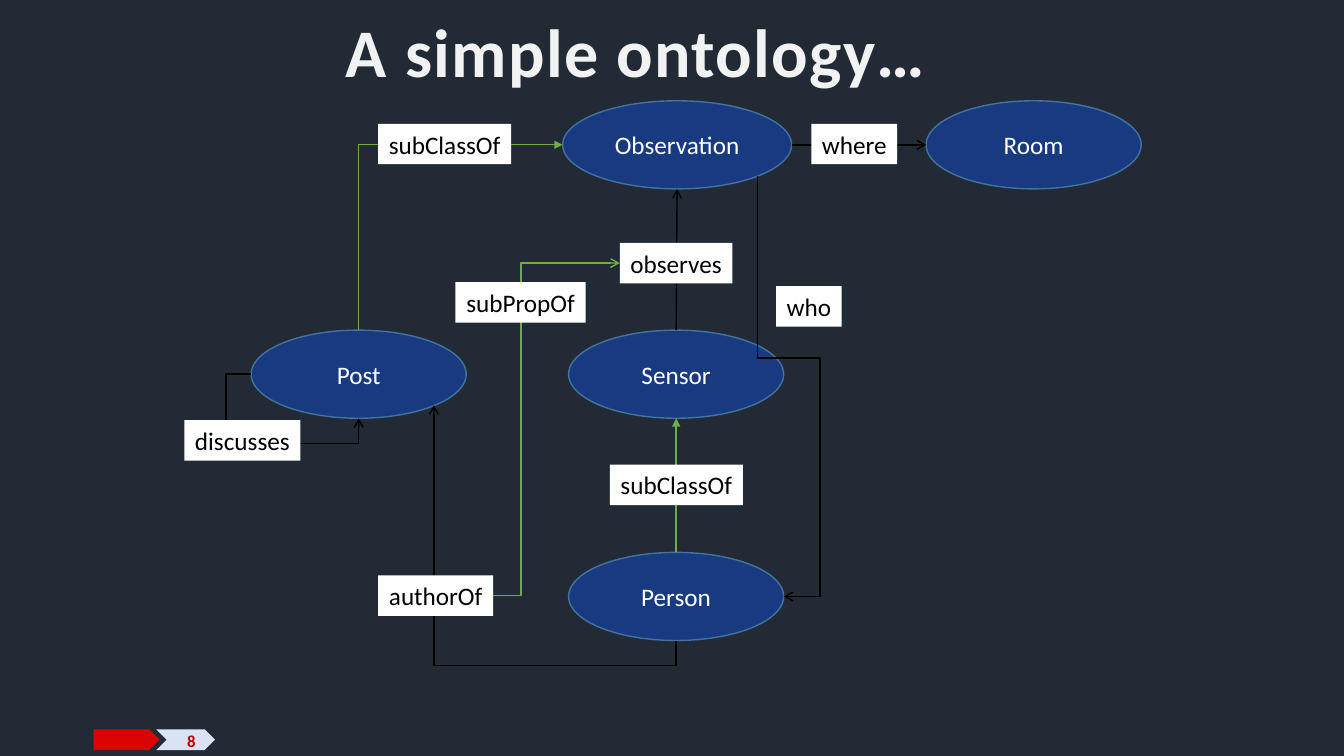
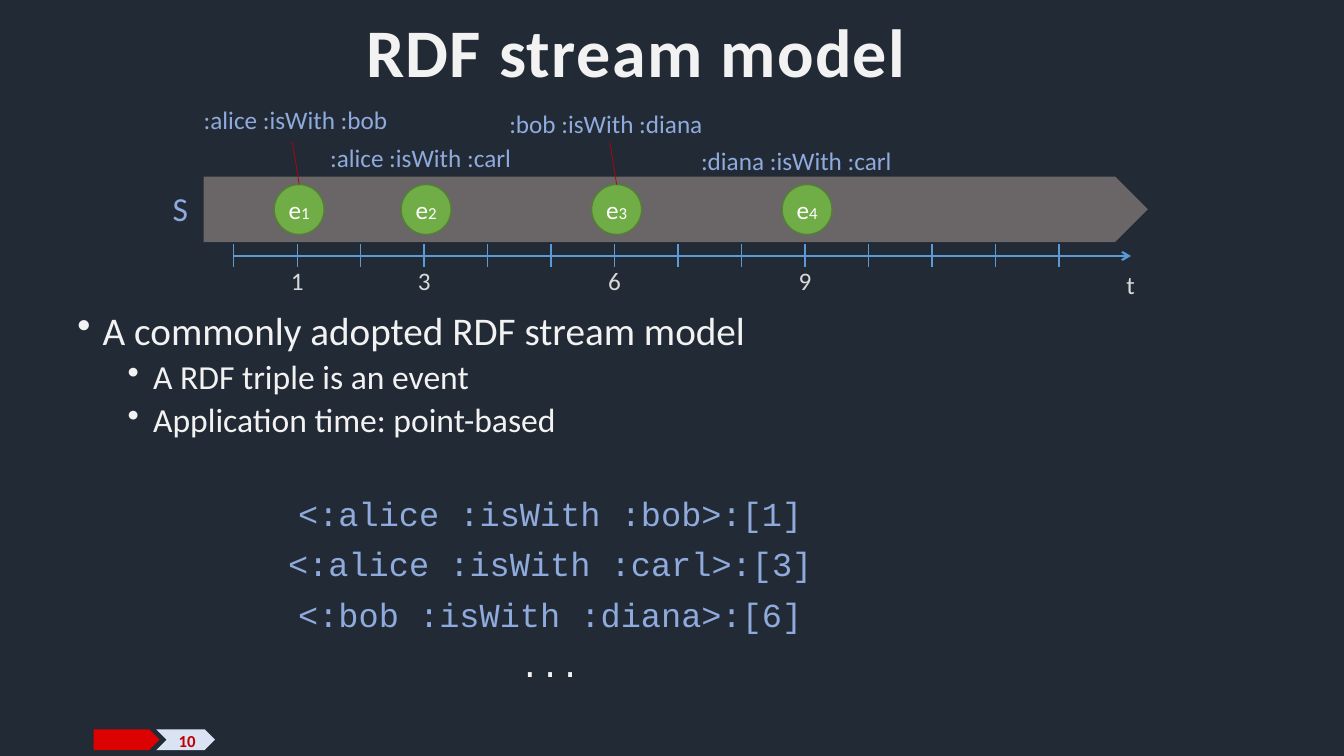
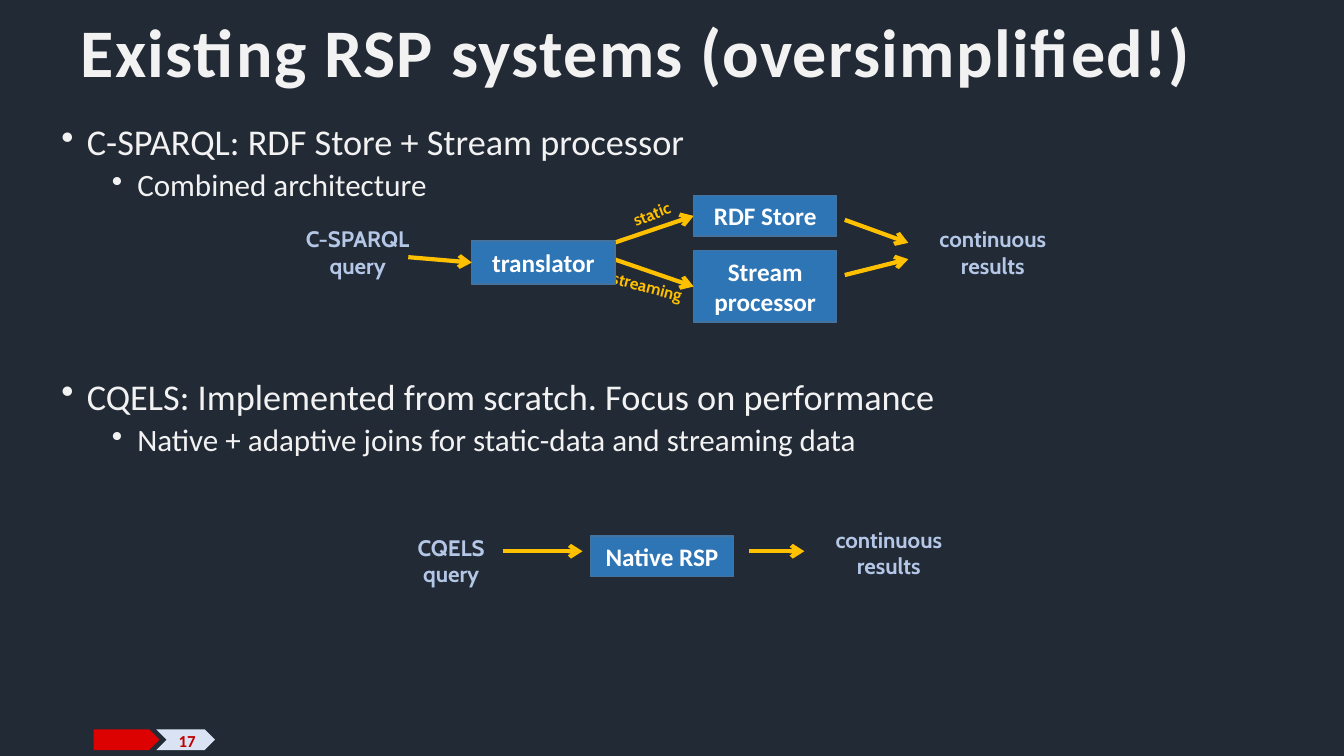
import pptx
import pptx.util
import pptx.dml.color
import pptx.enum.dml
import pptx.enum.shapes
import pptx.enum.text
import pptx.oxml.ns
from lxml import etree

Cm, Pt = pptx.util.Cm, pptx.util.Pt
RGBColor = pptx.dml.color.RGBColor
Kind = pptx.enum.shapes.MSO_SHAPE
Link = pptx.enum.shapes.MSO_CONNECTOR
Align = pptx.enum.text.PP_ALIGN
Anchor = pptx.enum.text.MSO_ANCHOR
qn = pptx.oxml.ns.qn

NIGHT = RGBColor(0x22, 0x2A, 0x35)
RED = RGBColor(0xDD, 0x02, 0x02)
WINE = RGBColor(0xC0, 0x00, 0x00)
ICE = RGBColor(0xDA, 0xE3, 0xF3)
PALE = RGBColor(0xF2, 0xF2, 0xF2)
WHITE = RGBColor(0xFF, 0xFF, 0xFF)
BLACK = RGBColor(0x00, 0x00, 0x00)
NAVY = RGBColor(0x18, 0x3A, 0x81)
STEEL = RGBColor(0x43, 0x73, 0x9E)
BLUE = RGBColor(0x2E, 0x75, 0xB6)
SKY = RGBColor(0x5B, 0x9B, 0xD5)
LILAC = RGBColor(0x8F, 0xAA, 0xDC)
MIST = RGBColor(0xB4, 0xC7, 0xE7)
GREEN = RGBColor(0x70, 0xAD, 0x47)
MOSS = RGBColor(0x53, 0x80, 0x35)
GREY = RGBColor(0x76, 0x71, 0x71)
SILVER = RGBColor(0xD9, 0xD9, 0xD9)
GOLD = RGBColor(0xFF, 0xC0, 0x00)


def put(shapes, kind, x, y, w, h, text="", size=18, color=WHITE, fill=None,
        edge=None, bold=False, font="Calibri", align=Align.CENTER):
    """Add a preset shape, or a text box when kind is None."""
    area = Cm(x), Cm(y), Cm(w), Cm(h)
    if kind is None:
        shape = shapes.add_textbox(*area)
    else:
        shape = shapes.add_shape(kind, *area)
        shape.shadow.inherit = False
        shape.fill.solid()
        shape.fill.fore_color.rgb = fill
        if edge is None:
            shape.line.fill.background()
        else:
            shape.line.color.rgb = edge
            shape.line.width = Pt(1)
    frame = shape.text_frame
    frame.word_wrap = True
    frame.margin_left = frame.margin_right = 0
    frame.vertical_anchor = Anchor.MIDDLE
    frame.text = text
    for par in frame.paragraphs:
        par.alignment = align
        for run in par.runs:
            run.font.name = font
            run.font.size = Pt(size)
            run.font.bold = bold
            run.font.color.rgb = color
    return shape


def join(shapes, x1, y1, x2, y2, color, width=1, head=None):
    """Add a straight connector with an optional arrowhead."""
    line = shapes.add_connector(Link.STRAIGHT, Cm(x1), Cm(y1), Cm(x2), Cm(y2))
    line.line.color.rgb = color
    line.line.width = Pt(width)
    props = line.element.spPr
    if head:
        etree.SubElement(props.find(qn("a:ln")), qn("a:tailEnd"), type=head)
    etree.SubElement(props, qn("a:effectLst"))
    return line


deck = pptx.Presentation()
deck.slide_width, deck.slide_height = Cm(33.87), Cm(19.05)

# Shared background, title place and footer bands
back = deck.slide_master.background.fill
back.solid()
back.fore_color.rgb = NIGHT
layout = deck.slide_layouts[5]
head = layout.placeholders[0]
head.left, head.top, head.width, head.height = Cm(0.79), Cm(0.53), Cm(30.48), Cm(1.73)

pages = []
for number, text in ((8, "A simple ontology…"), (10, "RDF stream model"),
                     (17, "Existing RSP systems (oversimplified!)")):
    page = deck.slides.add_slide(layout)
    frame = page.shapes.title.text_frame
    frame.text = text
    frame.word_wrap = True
    frame.auto_size = pptx.enum.text.MSO_AUTO_SIZE.NONE
    frame.vertical_anchor = Anchor.MIDDLE
    par = frame.paragraphs[0]
    par.alignment = Align.CENTER
    par.line_spacing = 0.9
    par.space_after = Pt(12)
    run = par.runs[0]
    run.font.name = "Calibri"
    run.font.size = Pt(48.6)
    run.font.bold = True
    run.font.color.rgb = PALE
    run.font.fill.solid()
    run.font.color.rgb = PALE
    par.runs[0]._r.get_or_add_rPr().set("spc", "100")
    put(page.shapes, None, 3.99, 18.16, 0.94, 1.02, str(number), 12, WINE,
        bold=True, align=Align.RIGHT)
    pages.append(page.shapes)
onto, stream, system = pages

for kind, x, w, fill in ((Kind.PENTAGON, 2.36, 1.66, RED),
                         (Kind.CHEVRON, 3.94, 1.48, ICE)):
    band = put(onto, kind, x, 18.38, w, 0.52, fill=fill)
    layout.shapes.element.append(band.element)

# Body text: text, bullet level (None for code), size, space before, colour
bodies = (
    (stream, (1.7, 7.72, 24.33, 10.11), (
        ("A commonly adopted RDF stream model", 0, 28, 0, PALE),
        ("A RDF triple is an event", 1, 24, 5, PALE),
        ("Application time: point-based", 1, 24, 5, PALE),
        ("<:alice :isWith :bob>:[1]", None, 24, 41, LILAC),
        ("<:alice :isWith :carl>:[3]", None, 24, 10, LILAC),
        ("<:bob :isWith :diana>:[6]", None, 24, 10, LILAC),
        ("...", None, 24, 10, PALE))),
    (system, (1.3, 3, 22.76, 8.89), (
        ("C-SPARQL: RDF Store + Stream processor", 0, 25.9, 0, PALE),
        ("Combined architecture", 1, 22.2, 5, PALE),
        ("CQELS: Implemented from scratch. Focus on performance", 0, 25.9, 125, PALE),
        ("Native + adaptive joins for static-data and streaming data", 1, 22.2, 5, PALE))),
)
for shapes, area, rows in bodies:
    frame = shapes.add_textbox(*map(Cm, area)).text_frame
    frame.word_wrap = True
    frame.text = "\n".join(row[0] for row in rows)
    for par, (text, level, size, before, color) in zip(frame.paragraphs, rows):
        par.line_spacing = 0.9
        par.space_before = Pt(before)
        if level is None:
            par.alignment = Align.CENTER
        else:
            par.level = level
            props = par._p.get_or_add_pPr()
            props.set("marL", str(Cm(0.64 + 1.27 * level)))
            props.set("indent", str(Cm(-0.64)))
            etree.SubElement(props, qn("a:buChar"), char="•")
        font = par.runs[0].font
        font.name = "Courier New" if level is None else "Calibri"
        font.size = Pt(size)
        font.color.rgb = color

# Ontology: classes
nodes = {}
for name, x, y, w in (("Observation", 14.18, 2.54, 5.77), ("Sensor", 14.33, 8.32, 5.42),
                      ("Person", 14.33, 13.92, 5.42), ("Post", 6.33, 8.32, 5.42),
                      ("Room", 23.34, 2.54, 5.42)):
    nodes[name] = put(onto, Kind.OVAL, x, y, w, 2.22, name, fill=NAVY, edge=STEEL)

# Ontology: property labels
tags = []
for name, x, y, w in (("where", 20.45, 3.12, 2.16), ("discusses", 4.65, 10.59, 2.92),
                      ("who", 19.56, 7.21, 1.65), ("observes", 15.62, 6.12, 2.84),
                      ("subClassOf", 15.37, 11.71, 3.35), ("subClassOf", 9.53, 3.12, 3.35),
                      ("authorOf", 9.53, 14.5, 2.9), ("subPropOf", 11.48, 7.11, 3.28)):
    tag = put(onto, Kind.RECTANGLE, x, y, w, 1.02, name, color=BLACK, fill=WHITE)
    nodes[name] = tag
    tags.append(tag)

# Ontology: links between sites, counted anticlockwise from the top in eighths
sites = ((0.5, 0), (0.15, 0.15), (0, 0.5), (0.15, 0.85),
         (0.5, 1), (0.85, 0.85), (1, 0.5), (0.85, 0.15))
links = (
    ("Person", 4, "Post", 5, BLACK, "arrow", "bentConnector3", 90, "H", (-10700,)),
    ("Observation", 6, "Room", 2, BLACK, "arrow", None, 0, "", ()),
    ("Post", 0, "Observation", 2, GREEN, "triangle", "bentConnector2", 90, "HV", ()),
    ("Person", 0, "Sensor", 4, GREEN, "triangle", None, 0, "", ()),
    ("Post", 2, "Post", 4, BLACK, "arrow", "bentConnector4", 180, "HV", (-23500, 157700)),
    ("Observation", 5, "Person", 6, BLACK, "arrow", "bentConnector4", 270, "H", (43300, 237900)),
    ("Sensor", 0, "Observation", 4, BLACK, "arrow", None, 0, "", ()),
    ("authorOf", 6, "observes", 2, GREEN, "arrow", "bentConnector3", 0, "V", (22000,)),
)
for start, i, end, j, color, tip, bend, turn, flips, bends in links:
    ends = []
    for name, site in ((start, i), (end, j)):
        node = nodes[name]
        ends += [(node.left + node.width * sites[site][0]) / Cm(1),
                 (node.top + node.height * sites[site][1]) / Cm(1)]
    line = join(onto, *ends, color, 1, tip)
    for mark, name, site in (("a:stCxn", start, i), ("a:endCxn", end, j)):
        node = nodes[name]
        spot = site // 2 if node in tags else site
        etree.SubElement(line.element.nvCxnSpPr.cNvCxnSpPr, qn(mark),
                         id=str(node.shape_id), idx=str(spot))
    if bend:
        x1, y1, x2, y2 = ends
        w, h = abs(x2 - x1), abs(y2 - y1)
        if turn % 180:
            w, h = h, w
        line.left, line.top = Cm((x1 + x2 - w) / 2), Cm((y1 + y2 - h) / 2)
        line.width, line.height = Cm(w), Cm(h)
        form = line.element.spPr.find(qn("a:xfrm"))
        form.set("rot", str(turn * 60000))
        for axis in "HV":
            form.set("flip" + axis, "1" if axis in flips else "0")
        shape = line.element.spPr.find(qn("a:prstGeom"))
        shape.set("prst", bend)
        for n, value in enumerate(bends, 1):
            etree.SubElement(shape.find(qn("a:avLst")), qn("a:gd"),
                             name=f"adj{n}", fmla=f"val {value}")
for tag in tags:
    onto.element.append(tag.element)

# Stream: band and time axis
band = put(stream, Kind.PENTAGON, 5.13, 4.45, 23.8, 1.65, fill=GREY)
tint = band.element.spPr.find(qn("a:solidFill"))[0]
etree.SubElement(tint, qn("a:alpha"), val="86000")
left, step = 5.89, 1.6
join(stream, left, 6.45, 28.5, 6.45, SKY, 1.5, "arrow")
for n in range(14):
    join(stream, left + n * step, 6.15, left + n * step, 6.73, SKY)
put(stream, None, 4.09, 4.62, 0.91, 1.27, "S", 24, LILAC)
put(stream, None, 28.12, 6.65, 0.74, 1.02, "t", color=SILVER)

# Stream: events with their triples
events = ((1, ":alice :isWith :bob", 4.8, 2.51, True),
          (3, ":alice :isWith :carl", 7.95, 3.45, False),
          (6, ":bob :isWith :diana", 12.62, 2.59, True),
          (9, ":diana :isWith :carl", 17.42, 3.53, False))
for n, (time, text, x, y, far) in enumerate(events, 1):
    mid = left + time * step
    ball = put(stream, Kind.OVAL, mid - 0.58, 4.65, 1.26, 1.26, "e", fill=GREEN, edge=MOSS)
    run = ball.text_frame.paragraphs[0].add_run()
    run.text = str(n)
    run.font.name = "Calibri"
    run.font.size = Pt(12)
    run.font.color.rgb = WHITE
    put(stream, None, mid - 0.42, 6.55, 0.84, 1.02, str(time), color=SILVER)
    if far:
        join(stream, mid + 0.05, 4.65, mid - 0.12, 3.58, WINE, 0.5)
    put(stream, None, x, y, 5.3, 1.02, text, color=LILAC)

# Systems: captions
for text, x, y, w in (("C-SPARQL\nquery", 7.29, 5.54, 3.45),
                      ("continuous\nresults", 23.09, 5.54, 3.86),
                      ("CQELS\nquery", 10.19, 13.31, 2.36),
                      ("continuous\nresults", 20.47, 13.11, 3.86)):
    put(system, None, x, y, w, 1.63, text, 16, MIST, bold=True, font="Cabin")
for text, x, y, w, turn in (("static", 15.57, 5, 1.7, -21.2),
                            ("streaming", 14.97, 6.83, 2.69, 14.7)):
    note = put(system, None, x, y, w, 0.76, text, 12, GOLD, bold=True, font="Cabin")
    note.rotation = turn

# Systems: boxes, each with the arrows that end at its left side
for text, x, y, h, starts in (
        ("RDF Store", 17.48, 4.93, 1.02, ((15.47, 6.12),)),
        ("Stream processor", 17.48, 6.32, 1.8, ((15.47, 6.53),)),
        ("Native RSP", 14.88, 13.51, 1.02, ()),
        ("translator", 11.89, 6.07, 1.09, ((10.29, 6.48),))):
    box = put(system, Kind.RECTANGLE, x, y, 3.61, h, text, fill=BLUE, edge=STEEL, bold=True)
    for x1, y1 in starts:
        line = join(system, x1, y1, x, y + h / 2, GOLD, 3, "arrow")
        line.end_connect(box, 1)

# Systems: free arrows
for ends in ((21.29, 5.54, 22.89, 6.12), (21.29, 6.93, 22.89, 6.53),
             (12.67, 13.89, 14.68, 13.89), (18.87, 13.89, 20.27, 13.89)):
    join(system, *ends, GOLD, 3, "arrow")

deck.save("out.pptx")
